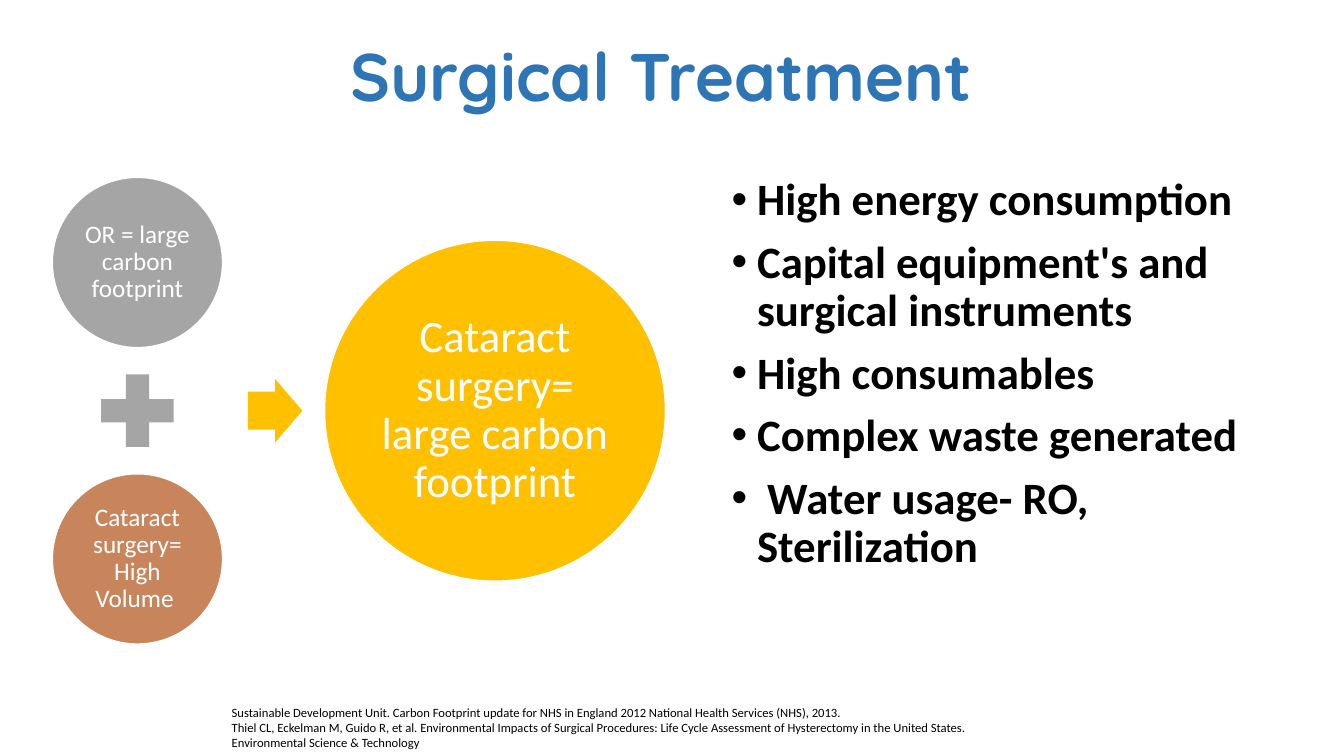
from lxml import etree
from pptx import Presentation
from pptx.dml.color import RGBColor
from pptx.enum.shapes import MSO_SHAPE as Shape
from pptx.enum.text import MSO_ANCHOR as Anchor, MSO_AUTO_SIZE as AutoSize, PP_ALIGN as Align
from pptx.oxml.ns import qn
from pptx.util import Cm, Pt

COLOURS = {
    "title": "2E75B6",
    "text": "000000",
    "white": "FFFFFF",
    "grey": "A5A5A5",
    "brown": "C8855C",
    "gold": "FFC000",
}
BULLETS = [
    "High energy consumption",
    "Capital equipment's and surgical instruments",
    "High consumables",
    "Complex waste generated",
    " Water usage- RO, Sterilization",
]
REFERENCES = [
    "Sustainable Development Unit. Carbon Footprint update for NHS in England 2012 "
    "National Health Services (NHS), 2013.",
    "Thiel CL, Eckelman M, Guido R, et al. Environmental Impacts of Surgical Procedures: "
    "Life Cycle Assessment of Hysterectomy in the United States. "
    "Environmental Science & Technology",
]


def rgb(name):
    return RGBColor.from_string(COLOURS[name])


def write_paragraphs(text_frame, lines, colour, font_format, paragraph_format):
    """Fill the frame with one paragraph per line, all formatted alike."""
    text_frame.word_wrap = True
    for index, line in enumerate(lines):
        paragraph = text_frame.paragraphs[0] if index == 0 else text_frame.add_paragraph()
        run = paragraph.add_run()
        run.text = line
        run.font.color.rgb = rgb(colour)
        for name, value in font_format.items():
            setattr(run.font, name, value)
        for name, value in paragraph_format.items():
            setattr(paragraph, name, value)


def add_title(slide, left, top, width, height):
    title = slide.shapes.title
    box = {"left": left, "top": top, "width": width, "height": height}
    for name, value in box.items():
        setattr(title, name, Cm(value))
    title.text_frame.auto_size = AutoSize.NONE
    title.text_frame.vertical_anchor = Anchor.MIDDLE
    write_paragraphs(title.text_frame, ["Surgical Treatment"], "title",
                     {"name": "Quicksand", "size": Pt(48), "bold": True},
                     {"alignment": Align.CENTER, "line_spacing": 0.9})


def add_filled_shape(slide, kind, left, top, width, height, colour):
    shape = slide.shapes.add_shape(kind, Cm(left), Cm(top), Cm(width), Cm(height))
    shape.shadow.inherit = False
    shape.fill.solid()
    shape.fill.fore_color.rgb = rgb(colour)
    shape.line.fill.background()
    return shape


def add_circle(slide, left, top, diameter, colour, text, size, inset):
    circle = add_filled_shape(slide, Shape.OVAL, left, top, diameter, diameter, colour)
    circle.line.color.rgb = rgb("white")
    circle.line.width = Pt(1)
    frame = circle.text_frame
    frame.vertical_anchor = Anchor.MIDDLE
    for side in ("left", "top", "right", "bottom"):
        setattr(frame, f"margin_{side}", Cm(inset))
    write_paragraphs(frame, [text], "white", {"name": "Calibri", "size": Pt(size)},
                     {"alignment": Align.CENTER, "line_spacing": 0.9})


def add_equation(slide, left, top, width, height):
    """Two causes stacked around a plus sign, leading to one large result."""
    cause, plus, result = 4.29, 2.49, 8.59
    arrow_width, arrow_height = 1.37, 1.6
    middle = top + height / 2
    add_circle(slide, left, top, cause, "grey", "OR = large carbon footprint", 18, 0.08)
    add_filled_shape(slide, Shape.MATH_PLUS, left + (cause - plus) / 2, middle - plus / 2,
                     plus, plus, "grey")
    add_circle(slide, left, top + height - cause, cause, "brown",
               "Cataract surgery= High Volume ", 18, 0.08)
    arrow = add_filled_shape(slide, Shape.RIGHT_ARROW, left + cause + 0.64,
                             middle - arrow_height / 2, arrow_width, arrow_height, "gold")
    arrow.adjustments[0] = 0.6
    add_circle(slide, left + width - result, middle - result / 2, result, "gold",
               "Cataract surgery= large carbon footprint", 32, 0.1)


def add_bullets(slide, left, top, width, height):
    box = slide.shapes.add_textbox(Cm(left), Cm(top), Cm(width), Cm(height))
    write_paragraphs(box.text_frame, BULLETS, "text",
                     {"name": "Calibri", "size": Pt(32), "bold": True},
                     {"line_spacing": 0.9, "space_before": Pt(10)})
    indent = Cm(0.64)
    for paragraph in box.text_frame.paragraphs:
        properties = paragraph._p.get_or_add_pPr()
        properties.set("marL", str(indent))
        properties.set("indent", str(-indent))
        etree.SubElement(properties, qn("a:buFont")).set("typeface", "Arial")
        etree.SubElement(properties, qn("a:buChar")).set("char", "•")


def add_references(slide, left, top, width, height):
    box = slide.shapes.add_textbox(Cm(left), Cm(top), Cm(width), Cm(height))
    write_paragraphs(box.text_frame, REFERENCES, "text",
                     {"name": "Calibri", "size": Pt(9)}, {})


def main():
    presentation = Presentation()
    presentation.slide_width = Cm(33.87)
    presentation.slide_height = Cm(19.05)
    slide = presentation.slides.add_slide(presentation.slide_layouts.get_by_name("Title Only"))
    add_title(slide, 2.06, 0.18, 29.21, 3.68)
    add_equation(slide, 1.32, 4.47, 15.45, 11.76)
    add_bullets(slide, 18.19, 4.34, 14.83, 12.83)
    add_references(slide, 5.59, 17.63, 19.66, 1.42)
    presentation.save("out.pptx")


if __name__ == "__main__":
    main()
